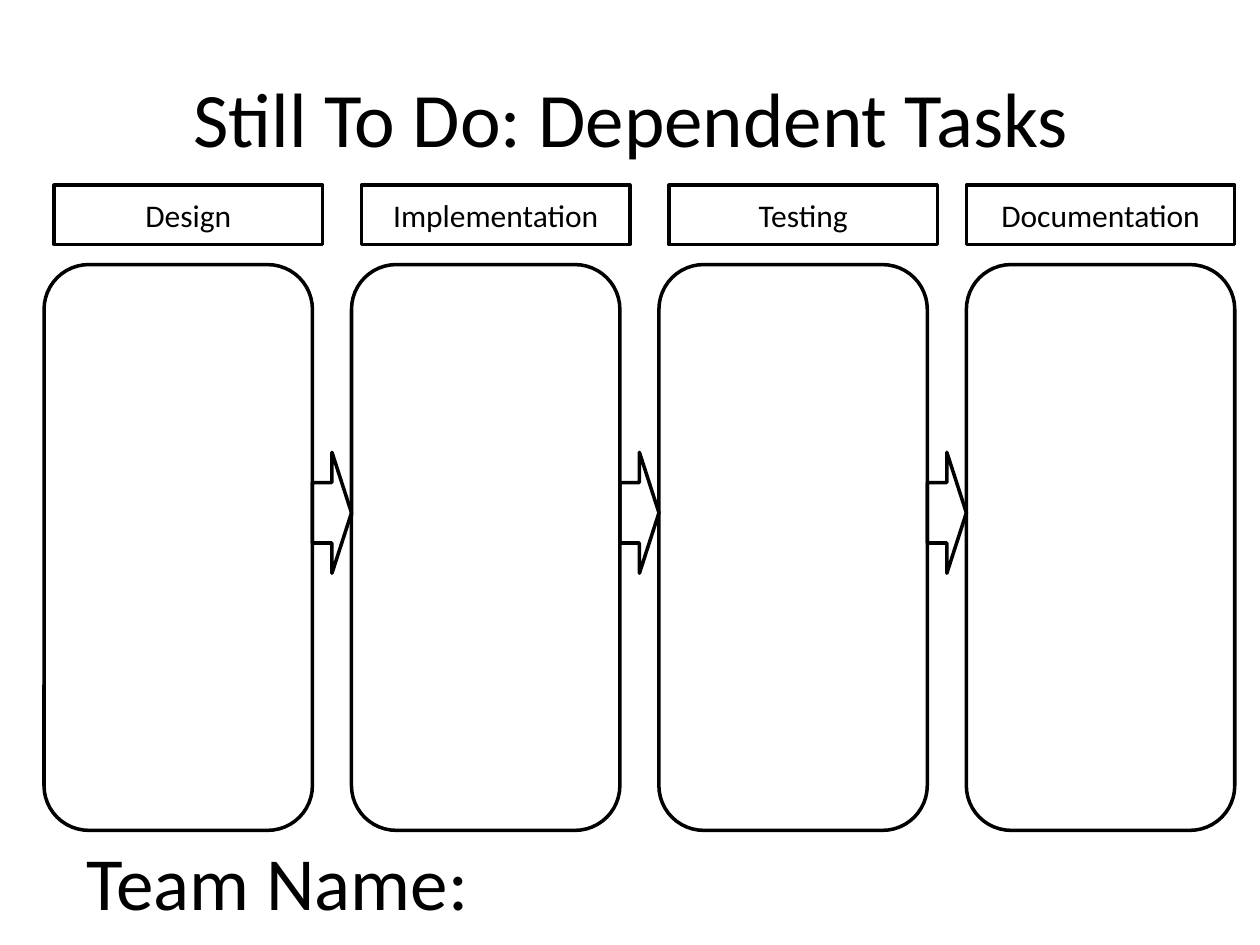
from pptx import Presentation
from pptx.dml.color import RGBColor
from pptx.enum import shapes, text
from pptx.util import Emu, Inches, Pt

# The slide is a grid of 1000 columns by 750 rows
COLS, ROWS = 1000, 750
UNIT = Inches(10) // COLS
HUES = {"ink": "000000"}
INK = RGBColor.from_string(HUES["ink"])
FONT = "Calibri"
KIND = shapes.MSO_SHAPE
ALIGN = text.PP_ALIGN
TASKS = ["Design", "Implementation", "Testing", "Documentation"]


def scale(box):
    return [Emu(n * UNIT) for n in box]


def write(shape, words, size, align):
    frame = shape.text_frame
    frame.word_wrap = True
    frame.vertical_anchor = text.MSO_ANCHOR.MIDDLE
    frame.text = words
    line = frame.paragraphs[0]
    line.alignment = align
    font = line.runs[0].font
    font.name, font.size = FONT, Pt(size)
    font.color.rgb = INK


def label(slide, box, words, size, align):
    write(slide.shapes.add_textbox(*scale(box)), words, size, align)


def outline(slide, kind, box):
    shape = slide.shapes.add_shape(kind, *scale(box))
    shape.shadow.inherit = False
    shape.fill.background()
    shape.line.color.rgb = INK
    shape.line.width = Pt(2)
    return shape


def board(slide, box, tasks):
    left, top, width, height = box
    gap, head, space = 31, 47, 16
    count = len(tasks)
    lane = (width - gap * (count - 1)) // count
    body = top + head + space
    for i, task in enumerate(tasks):
        x = left + i * (lane + gap)
        last = i == count - 1

        # Heading, set a little to the right except over the last lane
        shift = 0 if last else 8
        cell = outline(slide, KIND.RECTANGLE, (x + shift, top, lane, head))
        write(cell, task, 18, ALIGN.CENTER)

        # Lane for the task notes
        outline(slide, KIND.ROUNDED_RECTANGLE,
                (x, body, lane, top + height - body))

        # Arrow that fills the gap to the next lane
        if not last:
            outline(slide, KIND.RIGHT_ARROW, (x + lane, body + 149, gap, 96))


def main():
    deck = Presentation()
    deck.slide_width, deck.slide_height = scale((COLS, ROWS))
    slide = deck.slides.add_slide(deck.slide_layouts[6])

    # Title, task board, team line
    label(slide, (51, 30, 900, 125), "Still To Do: Dependent Tasks", 44,
          ALIGN.CENTER)
    board(slide, (35, 147, 946, 512), TASKS)
    label(slide, (59, 636, 900, 125), "Team Name:", 42.9, ALIGN.LEFT)
    deck.save("out.pptx")


if __name__ == "__main__":
    main()
